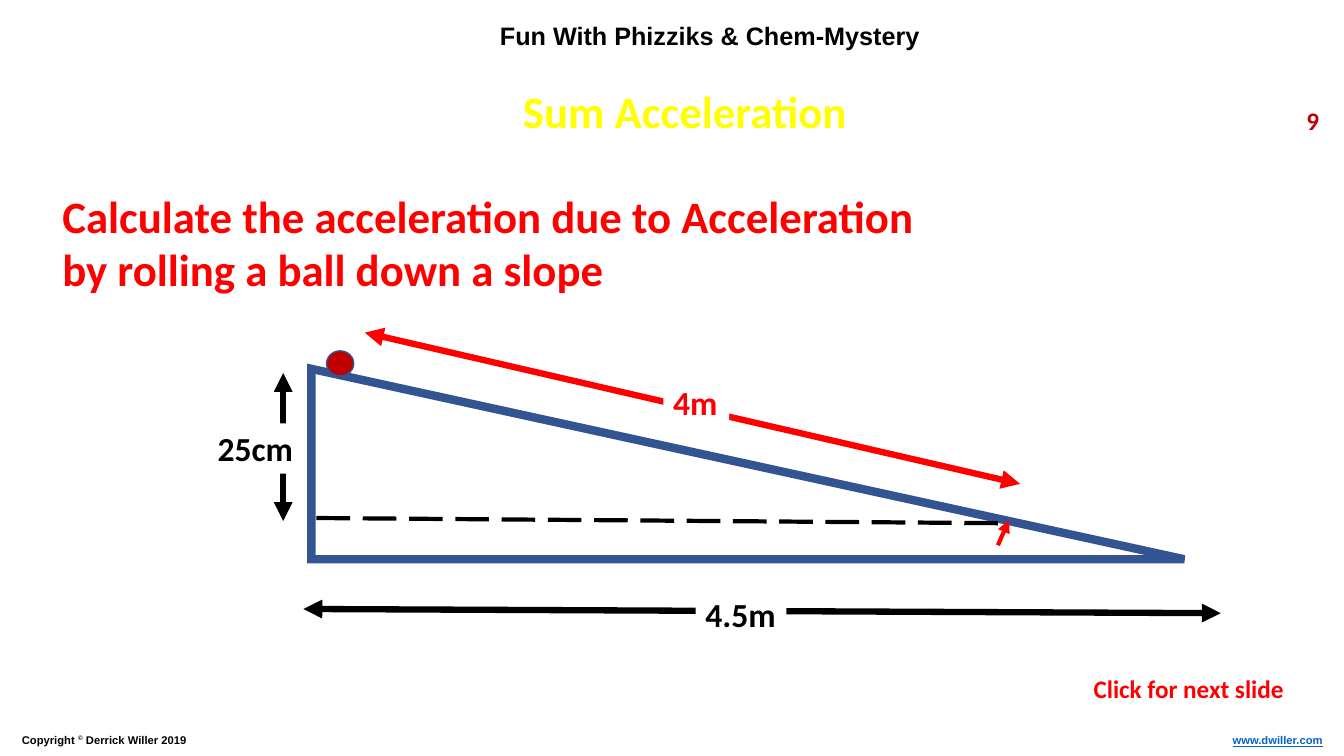
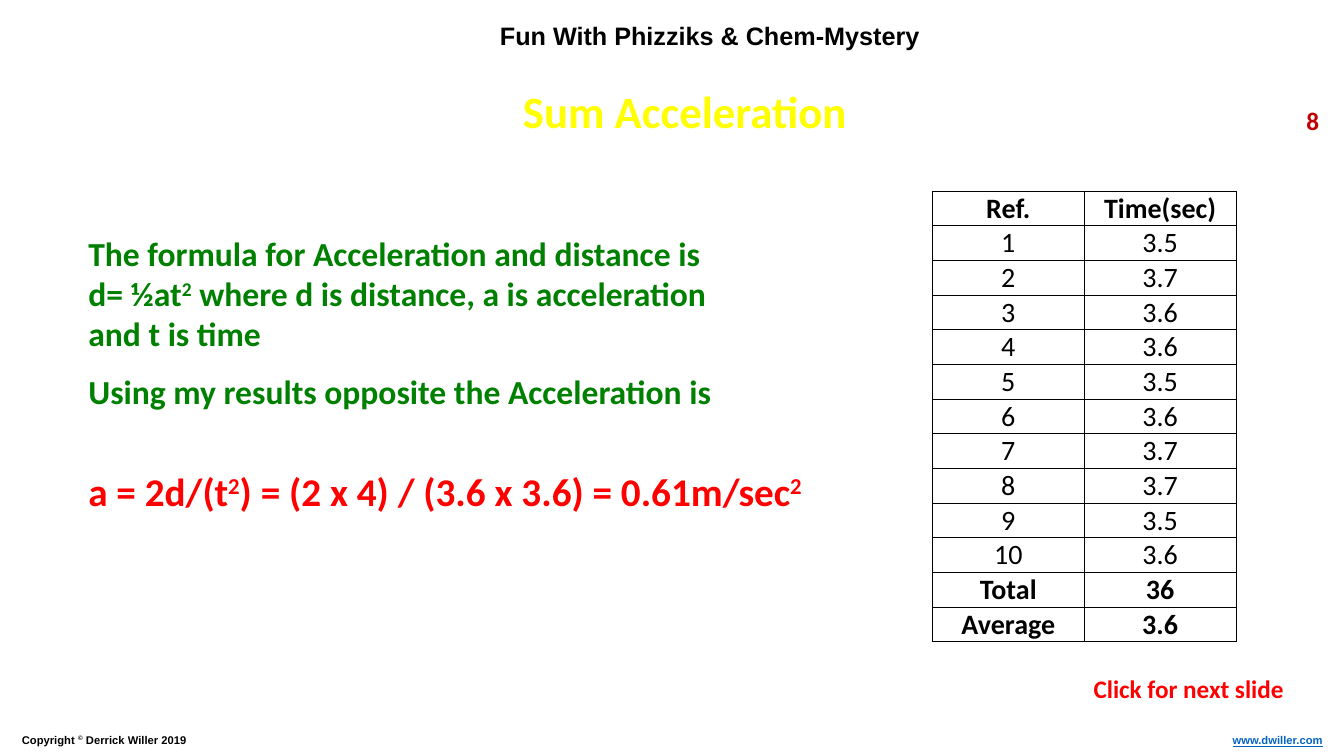
from lxml import etree
from pptx import Presentation
from pptx.dml.color import RGBColor
from pptx.enum.dml import MSO_LINE
from pptx.enum.shapes import MSO_CONNECTOR, MSO_SHAPE
from pptx.enum.text import MSO_ANCHOR, MSO_AUTO_SIZE, PP_ALIGN
from pptx.oxml.ns import qn
from pptx.util import Pt

# Enum members
LEFT, CENTER, RIGHT = PP_ALIGN.LEFT, PP_ALIGN.CENTER, PP_ALIGN.RIGHT
TOP, BOTTOM = MSO_ANCHOR.TOP, MSO_ANCHOR.BOTTOM
FIT_SHAPE, NO_FIT = MSO_AUTO_SIZE.SHAPE_TO_FIT_TEXT, MSO_AUTO_SIZE.NONE
STRAIGHT = MSO_CONNECTOR.STRAIGHT
LONG_DASH = MSO_LINE.LONG_DASH
TRIANGLE, OVAL = MSO_SHAPE.RIGHT_TRIANGLE, MSO_SHAPE.OVAL

# Colours and fonts
BLACK = RGBColor(0x00, 0x00, 0x00)
WHITE = RGBColor(0xFF, 0xFF, 0xFF)
RED = RGBColor(0xFF, 0x00, 0x00)
DARK_RED = RGBColor(0xC0, 0x00, 0x00)
YELLOW = RGBColor(0xFF, 0xFF, 0x00)
ORANGE = RGBColor(0xED, 0x7D, 0x31)
GREEN = RGBColor(0x00, 0x80, 0x00)
BLUE = RGBColor(0x32, 0x54, 0x91)
LINK_BLUE = RGBColor(0x05, 0x63, 0xC1)
BODY_FONT, BRAND_FONT = "Calibri", "Arial"

TIMES = ["3.5", "3.7", "3.6", "3.6", "3.5", "3.6", "3.7", "3.7", "3.5", "3.6"]
ROWS = [
    ("Ref.", "Time(sec)"),
    *[(str(ref), time) for ref, time in enumerate(TIMES, 1)],
    ("Total", "36"),
    ("Average", "3.6"),
]


def set_font(paragraph, size, color, bold=True, name=BODY_FONT):
    font = paragraph.font
    font.name, font.size, font.bold = name, Pt(size), bold
    font.color.rgb = color


def add_pieces(paragraph, text):
    """Text between bars is superscript; a newline is a line break."""
    for index, piece in enumerate(text.split("|")):
        for row, part in enumerate(piece.split("\n")):
            if row:
                paragraph.add_line_break()
            if part:
                run = paragraph.add_run()
                run.text = part
                if index % 2:
                    run._r.get_or_add_rPr().set("baseline", "30000")


def add_text(slide, box, paragraphs, size, color, name=BODY_FONT,
             align=LEFT, wrap=True, gap=0):
    shape = slide.shapes.add_textbox(*map(Pt, box))
    frame = shape.text_frame
    frame.word_wrap = wrap
    frame.auto_size = FIT_SHAPE
    for index, text in enumerate(paragraphs):
        paragraph = frame.add_paragraph() if index else frame.paragraphs[0]
        paragraph.alignment = align
        if index:
            paragraph.space_before = Pt(gap)
        set_font(paragraph, size, color, name=name)
        add_pieces(paragraph, text)
    return shape


def add_label(slide, box, text, color):
    label = add_text(slide, box, [text], 24, color, wrap=False)
    label.fill.solid()
    label.fill.fore_color.rgb = WHITE


def add_outlined(slide, kind, box, fill, weight):
    shape = slide.shapes.add_shape(kind, *map(Pt, box))
    shape.shadow.inherit = False
    shape.fill.solid()
    shape.fill.fore_color.rgb = fill
    shape.line.color.rgb = BLUE
    shape.line.width = Pt(weight)
    etree.SubElement(shape.line._get_or_add_ln(), qn("a:miter"), lim="800000")


def add_line(slide, start, end, color, weight, heads=(), dash=None):
    connector = slide.shapes.add_connector(STRAIGHT, *map(Pt, start + end))
    line = connector.line
    line.color.rgb = color
    line.width = Pt(weight)
    if dash:
        line.dash_style = dash
    for head in heads:
        etree.SubElement(line._get_or_add_ln(), qn(head), type="triangle")
    etree.SubElement(connector._element.spPr, qn("a:effectLst"))


def add_title(slide, text):
    title = slide.shapes.title
    title.left, title.top, title.width, title.height = map(Pt, (257, 56, 464.5, 60))
    frame = title.text_frame
    frame.word_wrap = True
    frame.auto_size = NO_FIT
    frame.vertical_anchor = TOP
    paragraph = frame.paragraphs[0]
    paragraph.alignment = CENTER
    set_font(paragraph, 32, YELLOW)
    run = paragraph.add_run()
    run.text = text
    # Orange letter outline
    outline = etree.SubElement(run._r.get_or_add_rPr(), qn("a:ln"), w=str(Pt(1.75)))
    fill = etree.SubElement(outline, qn("a:solidFill"))
    etree.SubElement(fill, qn("a:srgbClr"), val=str(ORANGE))


def add_page(deck, number):
    """A slide with the title, header and footers that all slides share."""
    slide = deck.slides.add_slide(deck.slide_layouts[5])
    add_text(slide, (350, 11, 317.5, 29), ["Fun With Phizziks & Chem-Mystery"],
             18, BLACK, BRAND_FONT, wrap=False)
    add_text(slide, (8.5, 520, 407, 17), ["Copyright |©| Derrick Willer 2019"],
             8, BLACK, BRAND_FONT)
    site = add_text(slide, (855.5, 520.5, 96.5, 17), ["www.dwiller.com"],
                    8, LINK_BLUE, BRAND_FONT, RIGHT)
    site.text_frame.paragraphs[0].font.underline = True
    add_text(slide, (926, 72, 24, 29), [number], 18, DARK_RED, wrap=False)
    add_title(slide, "Sum Acceleration")
    add_text(slide, (774, 477.5, 151, 29), ["Click for next slide"],
             18, RED, wrap=False)
    return slide


def add_border(cell):
    properties = cell._tc.get_or_add_tcPr()
    for index, side in enumerate(("a:lnL", "a:lnR", "a:lnT", "a:lnB")):
        edge = etree.Element(qn(side), w=str(Pt(0.5)))
        fill = etree.SubElement(edge, qn("a:solidFill"))
        etree.SubElement(fill, qn("a:srgbClr"), val=str(BLACK))
        properties.insert(index, edge)


def add_results(slide, box, rows):
    table = slide.shapes.add_table(len(rows), len(rows[0]), *map(Pt, box)).table
    table.first_row = table.horz_banding = False
    for row, values in enumerate(rows):
        table.rows[row].height = Pt(box[3] / len(rows))
        bold = not values[0].isdigit()
        for column, value in enumerate(values):
            cell = table.cell(row, column)
            cell.fill.background()
            cell.vertical_anchor = BOTTOM
            cell.margin_left = cell.margin_right = Pt(0.5)
            cell.margin_top, cell.margin_bottom = Pt(0.4), 0
            paragraph = cell.text_frame.paragraphs[0]
            paragraph.alignment = CENTER
            set_font(paragraph, 20, BLACK, bold)
            add_pieces(paragraph, value)
            add_border(cell)


def add_slope_slide(deck):
    slide = add_page(deck, "9")
    add_text(slide, (37.5, 131, 628, 85),
             ["Calculate the acceleration due to Acceleration by rolling a ball down a slope"],
             32, RED)
    # Slope and ball
    add_outlined(slide, TRIANGLE, (222.5, 263.5, 623.5, 136), WHITE, 6)
    add_outlined(slide, OVAL, (233.3, 250.6, 19.4, 18), DARK_RED, 1)
    # Dimensions
    both, tail = ("a:headEnd", "a:tailEnd"), ("a:tailEnd",)
    add_line(slide, (216.7, 435), (872, 438), BLACK, 4.5, both)
    add_line(slide, (202.3, 372.2), (202.3, 266.4), BLACK, 4.5, both)
    add_label(slide, (148.3, 302.4, 69, 36), "25cm", BLACK)
    add_label(slide, (496.8, 420.5, 65, 36), "4.5m", BLACK)
    add_line(slide, (712.8, 389.5), (720.7, 371.5), RED, 3, tail)
    add_line(slide, (712.8, 373.7), (222.5, 370), BLACK, 3, dash=LONG_DASH)
    add_line(slide, (260.6, 237.6), (728.6, 345.6), RED, 4.5, both)
    add_label(slide, (473.8, 269.3, 47, 36), "4m", RED)


def add_results_slide(deck):
    slide = add_page(deck, "8")
    add_text(slide, (56, 162.7, 610, 135.5),
             ["The formula for Acceleration and distance is\n"
              "d= ½at|2| where d is distance, a is acceleration\nand t is time",
              "Using my results opposite the Acceleration is"],
             24, GREEN, gap=12)
    add_results(slide, (666, 136.5, 217, 322), ROWS)
    add_text(slide, (56, 330, 534, 41),
             ["a = 2d/(t|2|) = (2 x 4) / (3.6 x 3.6) = 0.61m/sec|2|"],
             28, RED, wrap=False)


def main():
    deck = Presentation()
    deck.slide_width, deck.slide_height = Pt(960), Pt(540)
    add_slope_slide(deck)
    add_results_slide(deck)
    deck.save("out.pptx")


if __name__ == "__main__":
    main()
